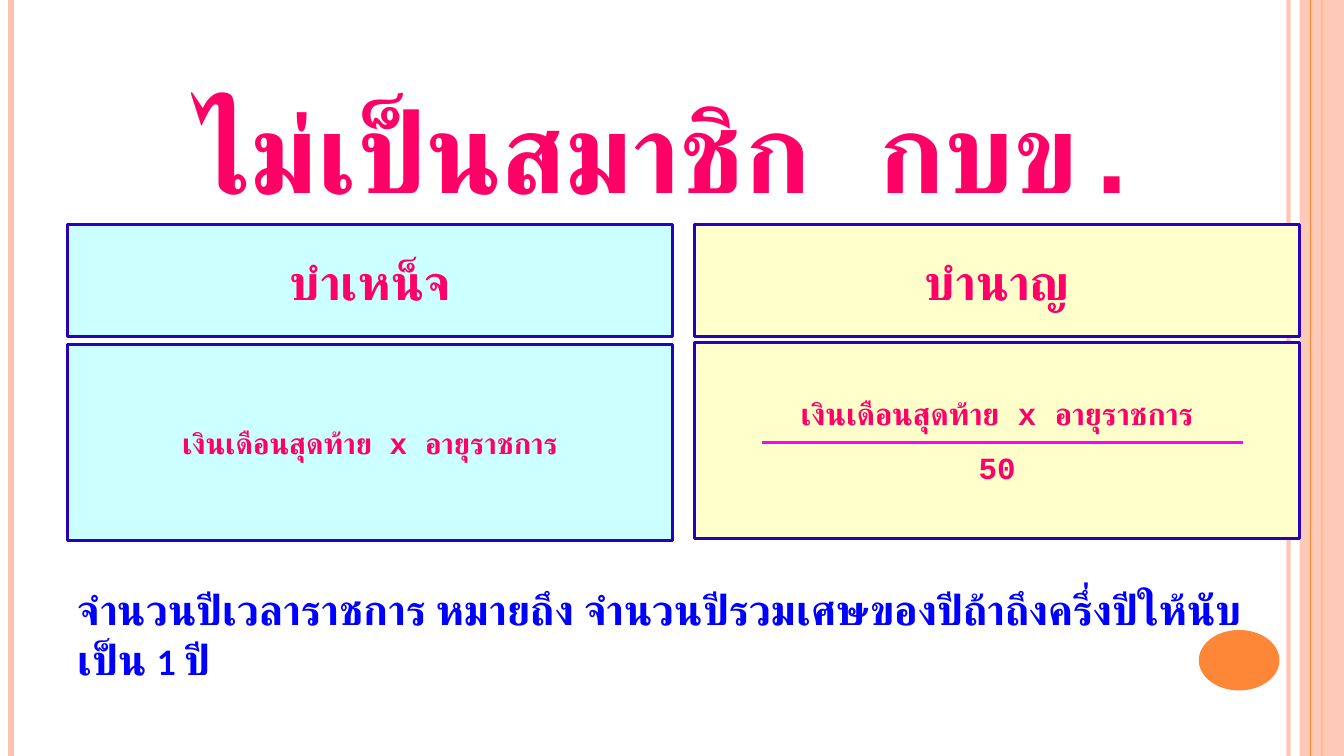
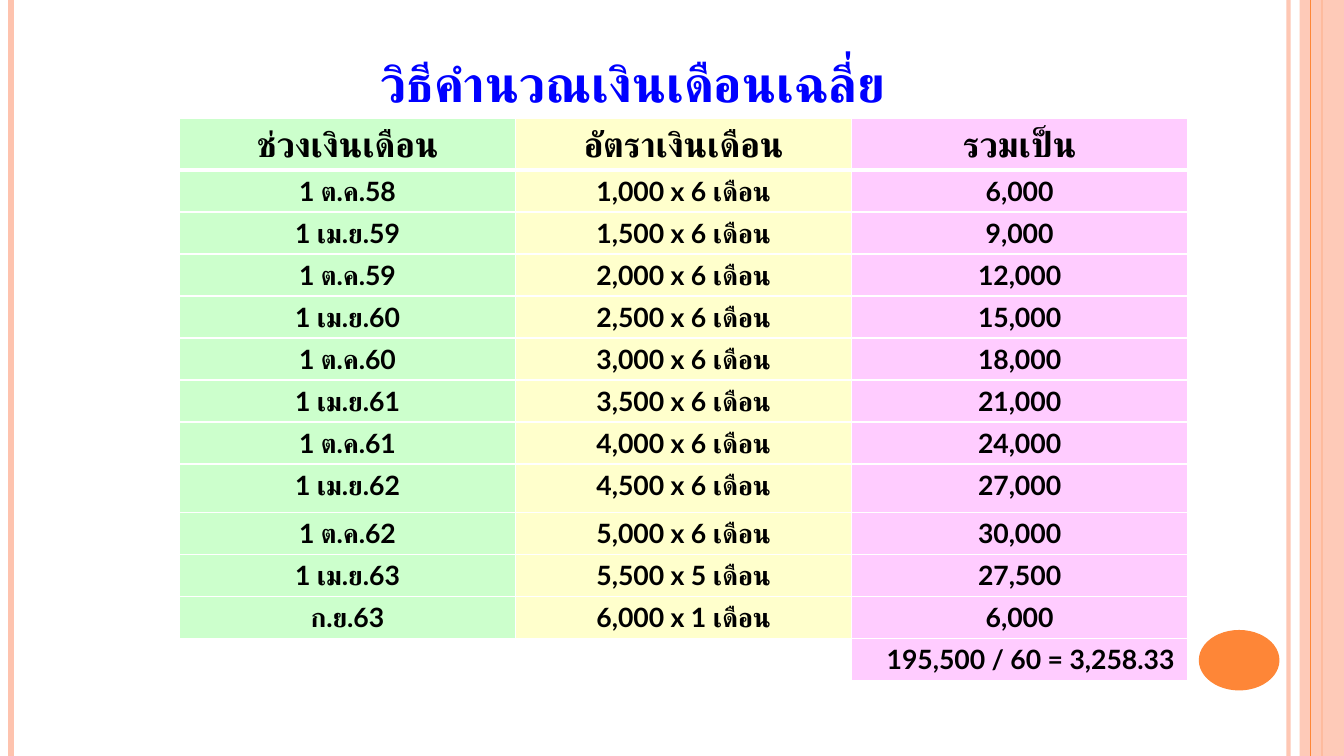
"""Build two slides on pension sums and the average salary table."""
import dataclasses
import typing

import lxml.etree
import pptx
import pptx.dml.color
import pptx.enum.dml
import pptx.enum.lang
import pptx.enum.shapes
import pptx.enum.text
import pptx.oxml.ns
import pptx.util

SCALE = 9144
WIDTH, HEIGHT = 1333, 750
ALIGN = pptx.enum.text.PP_ALIGN
ANCHOR = pptx.enum.text.MSO_ANCHOR
SHAPE = pptx.enum.shapes.MSO_SHAPE
qn = pptx.oxml.ns.qn


@dataclasses.dataclass(frozen=True)
class Theme:
    peach: str = "FEC3AE"
    orange: str = "FE8637"
    pink: str = "FF0066"
    blue: str = "0000FF"
    navy: str = "2602BE"
    violet: str = "FF00FF"
    black: str = "000000"
    white: str = "FFFFFF"
    cyan: str = "CCFFFF"
    cream: str = "FFFFCC"
    mint: str = "CCFFCC"
    rose: str = "FFCCFF"
    mono: str = "Courier New"
    sans: str = "Lato"
    serif: str = "TeX Gyre Schola"
    huge: int = 80
    large: int = 36
    head: int = 35
    note: int = 30
    column: int = 25
    ratio: int = 22
    sum: int = 21
    cell: int = 19


THEME = Theme()


class Box(typing.NamedTuple):
    left: int
    top: int
    width: int
    height: int


class Style(typing.NamedTuple):
    face: str
    size: int
    color: str
    align: ALIGN = ALIGN.CENTER
    caps: bool = False


class Card(typing.NamedTuple):
    box: Box
    fill: str
    size: int
    lines: tuple[str, ...]


class Rule(typing.NamedTuple):
    left: int
    color: str
    weight: float
    alpha: int = 100


RULES = (
    Rule(1278, THEME.peach, 3, 93),
    Rule(11, THEME.peach, 4.5),
    Rule(1311, THEME.orange, 1.5),
)
EDGE = Rule(1300, THEME.orange, 0.75)
CARDS = (
    Card(Box(67, 223, 600, 111), THEME.cyan, THEME.head, ("บำเหน็จ",)),
    Card(Box(689, 223, 600, 111), THEME.cream, THEME.head, ("บำนาญ",)),
    Card(Box(67, 342, 600, 194), THEME.cyan, THEME.sum,
         ("เงินเดือนสุดท้าย x อายุราชการ",)),
    Card(Box(689, 340, 600, 194), THEME.cream, THEME.ratio,
         ("เงินเดือนสุดท้าย x อายุราชการ", "50")),
)
ROWS = (
    ("ช่วงเงินเดือน", "อัตราเงินเดือน", "รวมเป็น"),
    ("1 ต.ค.58", "1,000 x 6 เดือน", "6,000"),
    ("1 เม.ย.59", "1,500 x 6 เดือน", "9,000"),
    ("1 ต.ค.59", "2,000 x 6 เดือน", "12,000"),
    ("1 เม.ย.60", "2,500 x 6 เดือน", "15,000"),
    ("1 ต.ค.60", "3,000 x 6 เดือน", "18,000"),
    ("1 เม.ย.61", "3,500 x 6 เดือน", "21,000"),
    ("1 ต.ค.61", "4,000 x 6 เดือน", "24,000"),
    ("1 เม.ย.62", "4,500 x 6 เดือน", "27,000"),
    ("1 ต.ค.62", "5,000 x 6 เดือน", "30,000"),
    ("1 เม.ย.63", "5,500 x 5 เดือน", "27,500"),
    ("ก.ย.63", "6,000 x 1 เดือน", "6,000"),
    ("", "", "195,500 / 60 = 3,258.33"),
)
TINTS = (THEME.mint, THEME.cream, THEME.rose)
TALL = {0: 42, 8: 48, 12: 33}


def px(value: int) -> pptx.util.Emu:
    return pptx.util.Emu(value * SCALE)


def paint(fill, color: str, alpha: int = 100) -> None:
    fill.solid()
    fill.fore_color.rgb = pptx.dml.color.RGBColor.from_string(color)
    if alpha < 100:
        for tone in fill._xPr.iter(qn("a:srgbClr")):
            lxml.etree.SubElement(tone, qn("a:alpha"), val=str(alpha * 1000))


def format_text(para, style: Style) -> None:
    para.alignment = style.align
    font = para.font
    font.name, font.bold = style.face, True
    font.size = pptx.util.Pt(style.size)
    font.language_id = pptx.enum.lang.MSO_LANGUAGE_ID.THAI
    paint(font.fill, style.color)
    props = para._p.pPr.find(qn("a:defRPr"))
    lxml.etree.SubElement(props, qn("a:cs"), typeface=style.face)
    if style.caps:
        props.set("cap", "small")


def write(frame, lines: tuple[str, ...], style: Style, anchor: ANCHOR) -> None:
    frame.word_wrap = True
    frame.auto_size = pptx.enum.text.MSO_AUTO_SIZE.NONE
    frame.vertical_anchor = anchor
    for index, line in enumerate(lines):
        para = frame.add_paragraph() if index else frame.paragraphs[0]
        para.text = line
        format_text(para, style)
        if index:
            para.space_before = pptx.util.Pt(12)


def add_block(slide, kind: SHAPE, box: Box, color: str, alpha: int = 100):
    shape = slide.shapes.add_shape(kind, *map(px, box))
    shape.shadow.inherit = False
    paint(shape.fill, color, alpha)
    shape.line.fill.background()
    return shape


def add_line(slide, start: tuple[int, int], end: tuple[int, int],
             color: str, weight: float, alpha: int = 100):
    line = slide.shapes.add_connector(
        pptx.enum.shapes.MSO_CONNECTOR.STRAIGHT, *map(px, start + end))
    line.line.width = pptx.util.Pt(weight)
    paint(line.line.fill, color, alpha)
    lxml.etree.SubElement(line.element.spPr, qn("a:effectLst"))
    return line


def add_rule(slide, rule: Rule):
    return add_line(slide, (rule.left, 0), (rule.left, HEIGHT),
                    rule.color, rule.weight, rule.alpha)


def dress_master(deck, slide) -> None:
    parts = [add_rule(slide, rule) for rule in RULES]
    parts.append(add_block(slide, SHAPE.RECTANGLE, Box(1289, 0, 44, HEIGHT),
                           THEME.peach, 87))
    parts.append(add_rule(slide, EDGE))
    parts.append(add_block(slide, SHAPE.OVAL, Box(1189, 625, 80, 60),
                           THEME.orange))
    tree = deck.slide_master.shapes.element
    for number, part in enumerate(parts, 100):
        next(part.element.iter(qn("p:cNvPr"))).set("id", str(number))
        tree.append(part.element)


def set_title(slide, box: Box, text: str, style: Style) -> None:
    title = slide.shapes.title
    title.left, title.top, title.width, title.height = map(px, box)
    write(title.text_frame, (text,), style, ANCHOR.BOTTOM)


def add_card(slide, card: Card) -> None:
    shape = add_block(slide, SHAPE.RECTANGLE, card.box, card.fill)
    paint(shape.line.fill, THEME.navy)
    shape.line.width = pptx.util.Pt(2)
    write(shape.text_frame, card.lines,
          Style(THEME.mono, card.size, THEME.pink), ANCHOR.MIDDLE)


def add_borders(cell, head: bool) -> None:
    props = cell._tc.get_or_add_tcPr()
    for index, side in enumerate("LRTB"):
        weight = 3 if head and side == "B" else 1
        edge = lxml.etree.Element(qn(f"a:ln{side}"),
                                  w=str(pptx.util.Pt(weight)))
        fill = lxml.etree.SubElement(edge, qn("a:solidFill"))
        lxml.etree.SubElement(fill, qn("a:srgbClr"), val=THEME.white)
        props.insert(index, edge)


def fill_cell(cell, text: str, tint: str, row: int) -> None:
    cell.margin_left = cell.margin_right = px(13)
    cell.margin_top = cell.margin_bottom = px(5)
    para = cell.text_frame.paragraphs[0]
    if text:
        para.text = text
        paint(cell.fill, tint)
    else:
        cell.fill.background()
    last = row == len(ROWS) - 1
    size = THEME.cell if row else THEME.column
    format_text(para, Style(THEME.sans, size, THEME.black,
                            ALIGN.RIGHT if last else ALIGN.CENTER))
    add_borders(cell, row == 0)


def add_grid(slide) -> None:
    heights = [TALL.get(row, 41) for row in range(len(ROWS))]
    box = Box(178, 117, 1000, sum(heights))
    table = slide.shapes.add_table(len(ROWS), len(TINTS), *map(px, box)).table
    table.horz_banding = False
    for row, (texts, height) in enumerate(zip(ROWS, heights)):
        table.rows[row].height = px(height)
        for column, (text, tint) in enumerate(zip(texts, TINTS)):
            fill_cell(table.cell(row, column), text, tint, row)


def build_rates(slide) -> None:
    banner = slide.shapes.add_textbox(*map(px, Box(100, 67, 1133, 161)))
    write(banner.text_frame, ("ไม่เป็นสมาชิก กบข.",),
          Style(THEME.mono, THEME.huge, THEME.pink), ANCHOR.MIDDLE)
    for card in CARDS:
        add_card(slide, card)
    add_line(slide, (756, 439), (1233, 439), THEME.violet, 2)
    set_title(slide, Box(67, 592, 1233, 92),
              "จํานวนปีเวลาราชการ หมายถึง จํานวนปีรวมเศษของปีถ้าถึงครึ่งปีให้นับเป็น 1 ปี",
              Style(THEME.sans, THEME.note, THEME.blue, ALIGN.LEFT, True))


def build_mean(slide) -> None:
    set_title(slide, Box(367, 42, 567, 75), "วิธีคำนวณเงินเดือนเฉลี่ย",
              Style(THEME.serif, THEME.large, THEME.blue, ALIGN.LEFT, True))
    add_grid(slide)


def main() -> None:
    deck = pptx.Presentation()
    deck.slide_width, deck.slide_height = px(WIDTH), px(HEIGHT)
    layout = deck.slide_layouts[5]
    first, second = (deck.slides.add_slide(layout) for _ in range(2))
    dress_master(deck, first)
    build_rates(first)
    build_mean(second)
    deck.save("out.pptx")


if __name__ == "__main__":
    main()
